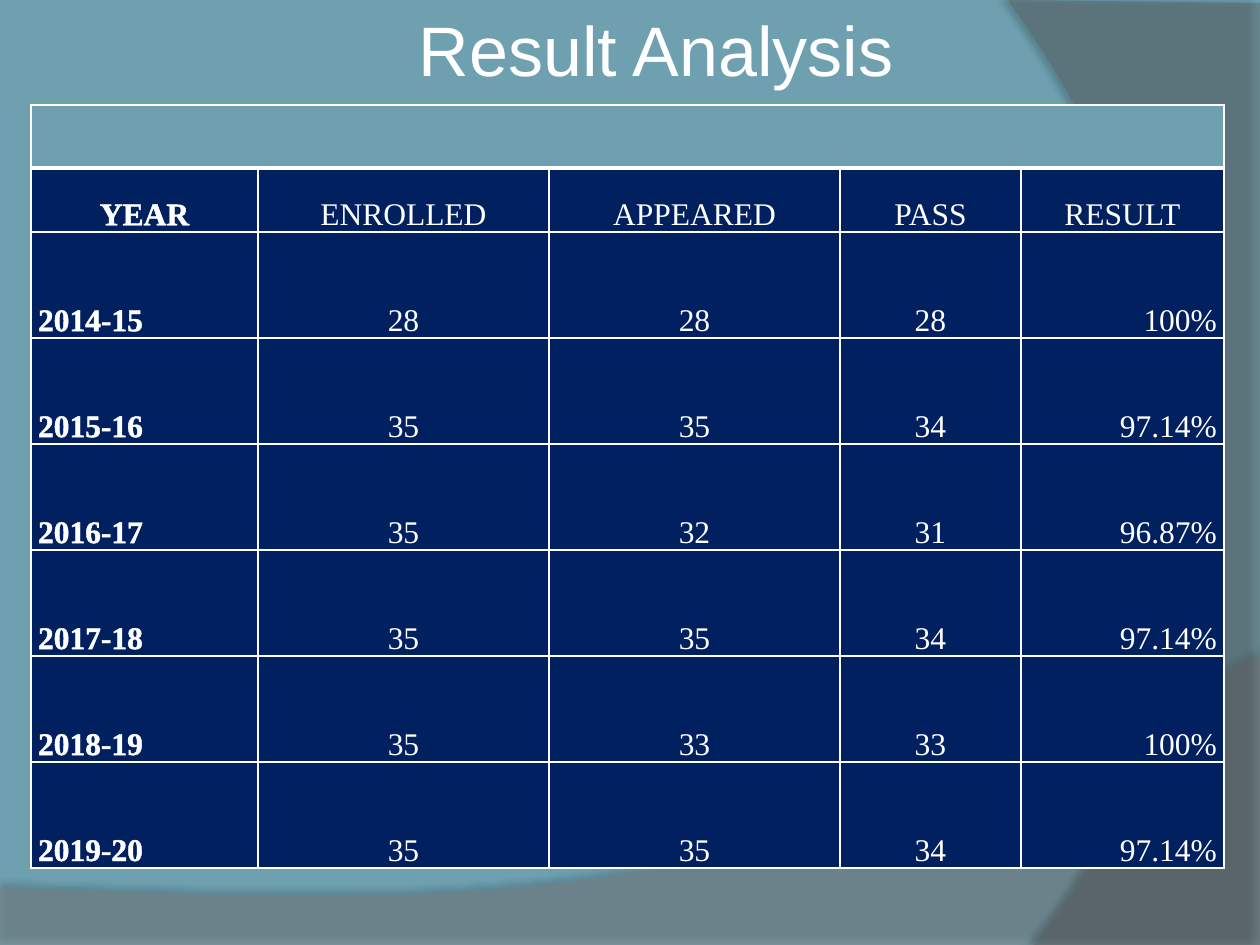
from lxml import etree
from pptx import Presentation, util as u
from pptx.dml.color import RGBColor
from pptx.enum import text as t
from pptx.oxml import parse_xml
from pptx.oxml.ns import nsdecls, qn

# Content
TITLE = "Result Analysis"
ROWS = [
    ("YEAR", "ENROLLED", "APPEARED", "PASS", "RESULT"),
    ("2014-15", "28", "28", "28", "100%"),
    ("2015-16", "35", "35", "34", "97.14%"),
    ("2016-17", "35", "32", "31", "96.87%"),
    ("2017-18", "35", "35", "34", "97.14%"),
    ("2018-19", "35", "33", "33", "100%"),
    ("2019-20", "35", "35", "34", "97.14%"),
]
COLORS = {"back": "6EA0B0", "cell": "002060", "white": "FFFFFF",
          "floor": "7F7F7F", "side": "5E5E5E", "shadow": "000000"}

# Layout in px
W, H = 1260, 945
COLS = [227, 291, 291, 181, 203]
HEIGHTS = [63, 64] + [106] * 6
TABLE_AT = (31, 105)
TITLE_BOX = (262, 0, 788, 97)

# Background waves: start, then points (2 numbers) or Bezier curves (6 numbers)
WAVES = [
    dict(color="floor", alpha=45, shadow=(35, 3.5, 270), start=(0, 888),
         steps=[(0, 946), (1260, 946), (1260, 655),
                (704, 919, 493, 906, 0, 888)]),
    dict(color="side", alpha=40, shadow=(45, 4, 180), start=(1260, 3),
         steps=[(1260, 945), (1034, 945),
                (1178, 780, 1283, 378, 1008, 0)]),
]


def px(n):
    return round(n * 914400 / 126)


def rgb(name):
    return RGBColor.from_string(COLORS[name])


def apply(obj, values):
    for name, value in values.items():
        setattr(obj, name, value)


def curve(p0, step, n=40):
    pts = [p0, step[:2], step[2:4], step[4:]]
    for i in range(1, n + 1):
        k = i / n
        weights = ((1 - k) ** 3, 3 * k * (1 - k) ** 2, 3 * k * k * (1 - k), k ** 3)
        yield tuple(sum(w * p[a] for w, p in zip(weights, pts)) for a in (0, 1))


def add_wave(slide, color, alpha, shadow, start, steps):
    points = [start]
    for step in steps:
        points += [step] if len(step) == 2 else curve(points[-1], step)
    fb = slide.shapes.build_freeform(*map(px, start), scale=1.0)
    fb.add_line_segments([(px(x), px(y)) for x, y in points[1:]], close=True)
    sp = fb.convert_to_shape()
    sp.fill.solid()
    sp.fill.fore_color.rgb = rgb(color)
    sp.line.fill.background()
    clr = sp.fill._xPr.find(qn("a:solidFill"))[0]
    etree.SubElement(clr, qn("a:alpha"), val=str(alpha * 1000))
    opacity, dist, angle = shadow
    sp._element.spPr.append(parse_xml(
        f'<a:effectLst {nsdecls("a")}><a:outerShdw blurRad="{u.Pt(4)}" '
        f'dist="{u.Pt(dist)}" dir="{angle * 60000}" algn="ctr" rotWithShape="0">'
        f'<a:srgbClr val="{COLORS["shadow"]}"><a:alpha val="{opacity * 1000}"/>'
        f'</a:srgbClr></a:outerShdw></a:effectLst>'))


def line_xml(tag, width):
    return parse_xml(f'<a:{tag} {nsdecls("a")} w="{u.Pt(width)}"><a:solidFill>'
                     f'<a:srgbClr val="{COLORS["white"]}"/></a:solidFill></a:{tag}>')


def style_cell(cell, row):
    cell.fill.solid()
    cell.fill.fore_color.rgb = rgb("cell" if row else "back")
    thick = {0: "lnB", 1: "lnT"}.get(row)
    for i, side in enumerate(("lnL", "lnR", "lnT", "lnB")):
        cell._tc.tcPr.insert(i, line_xml(side, 3 if side == thick else 1))


def fill_cell(cell, value, align, bold):
    apply(cell, dict(vertical_anchor=t.MSO_ANCHOR.BOTTOM, margin_left=px(7),
                     margin_right=px(7), margin_top=0, margin_bottom=0))
    p = cell.text_frame.paragraphs[0]
    apply(p, dict(alignment=align, line_spacing=1.07, space_after=u.Pt(8)))
    add_run(p, value, "Times New Roman", 18, bold)


def add_run(p, value, font, size, bold=False):
    r = p.add_run()
    r.text = value
    apply(r.font, dict(name=font, size=u.Pt(size), bold=bold))
    r.font.color.rgb = rgb("white")
    if bold:  # thin outline around the letters
        r.font._element.insert(0, line_xml("ln", 0.53))


def add_results(slide):
    frame = slide.shapes.add_table(len(HEIGHTS), len(COLS), *map(
        px, (*TABLE_AT, sum(COLS), sum(HEIGHTS))))
    table = frame.table
    apply(table, dict(first_row=False, horz_banding=False))
    for col, width in zip(table.columns, COLS):
        col.width = px(width)
    for row, height in zip(table.rows, HEIGHTS):
        row.height = px(height)
    for i in range(len(HEIGHTS)):
        for j in range(len(COLS)):
            style_cell(table.cell(i, j), i)
    table.cell(0, 0).merge(table.cell(0, len(COLS) - 1))
    al = t.PP_ALIGN
    body = [al.LEFT, al.CENTER, al.CENTER, al.CENTER, al.RIGHT]
    for i, values in enumerate(ROWS, 1):
        for j, value in enumerate(values):
            fill_cell(table.cell(i, j), value,
                      al.CENTER if i == 1 else body[j], j == 0)


def main():
    prs = Presentation()
    apply(prs, dict(slide_width=px(W), slide_height=px(H)))
    slide = prs.slides.add_slide(prs.slide_layouts[6])
    slide.background.fill.solid()
    slide.background.fill.fore_color.rgb = rgb("back")
    for wave in WAVES:
        add_wave(slide, **wave)
    add_results(slide)

    # Title
    tf = slide.shapes.add_textbox(*map(px, TITLE_BOX)).text_frame
    apply(tf, dict(word_wrap=True, auto_size=t.MSO_AUTO_SIZE.SHAPE_TO_FIT_TEXT))
    tf.paragraphs[0].alignment = t.PP_ALIGN.CENTER
    add_run(tf.paragraphs[0], TITLE, "Arial", 40)
    prs.save("out.pptx")


if __name__ == "__main__":
    main()
